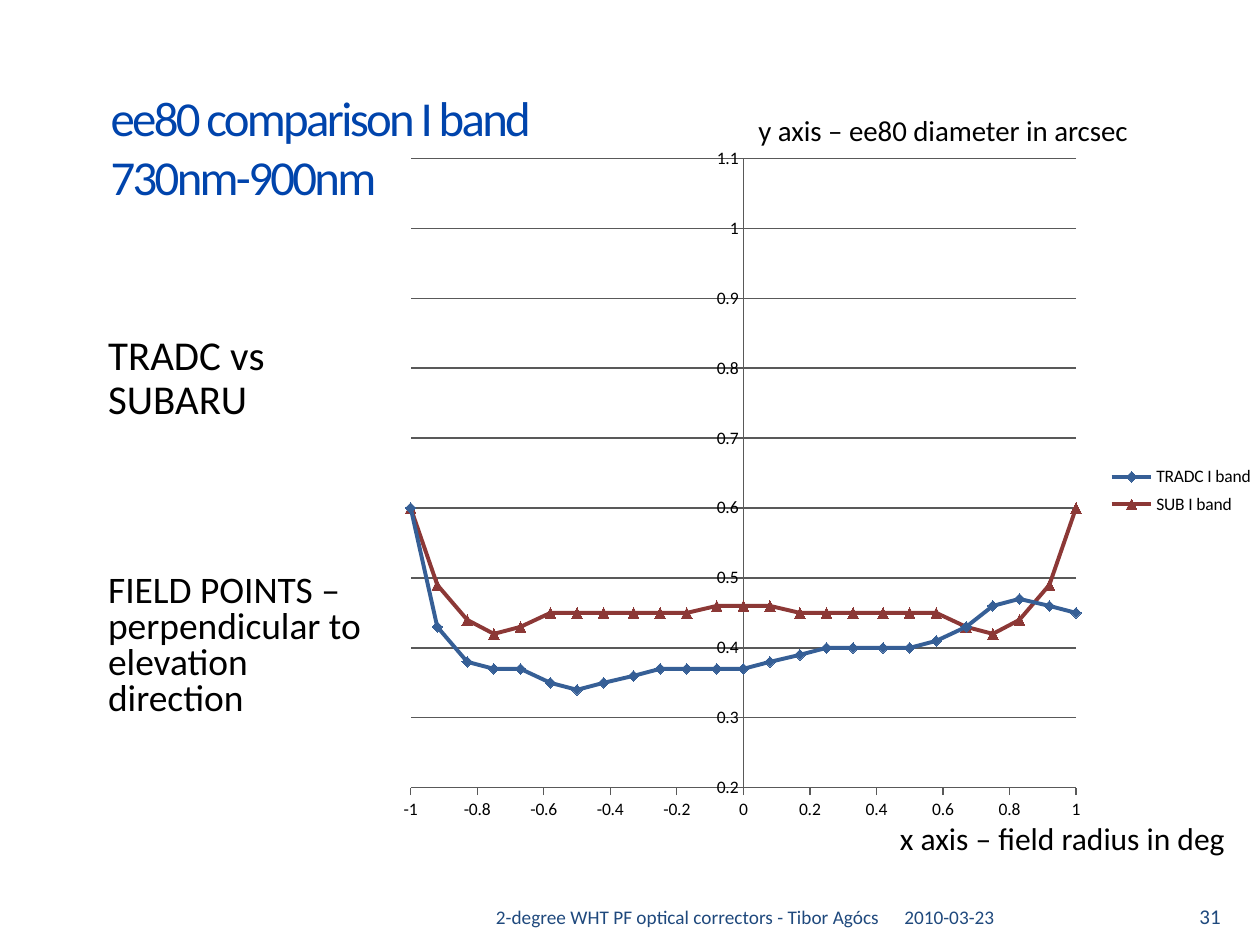
from dataclasses import dataclass

from lxml import etree
from pptx import Presentation
from pptx import util as u
from pptx.chart.data import XyChartData
from pptx.dml.color import RGBColor
from pptx.enum import chart as charts, text
from pptx.oxml.ns import qn

FONT = "Calibri"
COLORS = {
    "title": "0044AC", "footer": "1F497D", "text": "000000",
    "grid": "595959", "tradc": "365F96", "subaru": "8C3836",
}
ANCHOR = text.MSO_ANCHOR
ALIGN = text.PP_ALIGN


@dataclass
class Box:
    left: float
    top: float
    width: float
    height: float

    def lengths(self) -> list:
        return [u.Cm(value) for value in (self.left, self.top, self.width, self.height)]


@dataclass
class Label:
    content: str
    box: Box
    format: dict


@dataclass
class Curve:
    name: str
    color: str
    marker: charts.XL_MARKER_STYLE
    values: list


SUBARU_HALF = [0.6, 0.49, 0.44, 0.42, 0.43, 0.45, 0.45, 0.45, 0.45, 0.45, 0.45, 0.46]
FIELD_RADII = [round(step / 12, 2) for step in range(-12, 13)]
CURVES = [
    Curve("TRADC I band", "tradc", charts.XL_MARKER_STYLE.DIAMOND,
          [0.6, 0.43, 0.38, 0.37, 0.37, 0.35, 0.34, 0.35, 0.36, 0.37, 0.37, 0.37, 0.37,
           0.38, 0.39, 0.4, 0.4, 0.4, 0.4, 0.41, 0.43, 0.46, 0.47, 0.46, 0.45]),
    Curve("SUB I band", "subaru", charts.XL_MARKER_STYLE.TRIANGLE,
          SUBARU_HALF + [0.46] + SUBARU_HALF[::-1]),
]

FOOTER = dict(size=11, color="footer", inset=0.25)
LABELS = [
    Label("2-degree WHT PF optical correctors - Tibor Agócs",
          Box(2.54, 17.83, 15.44, 1.02), FOOTER | dict(align=ALIGN.RIGHT)),
    Label("2010-03-23", Box(17.98, 17.83, 5.92, 1.02), FOOTER),
    Label("31", Box(23.93, 17.83, 1.27, 1.02), FOOTER | dict(size=12)),
    Label("x axis – field radius in deg", Box(18.14, 16.08, 7.26, 1.19), dict(size=18)),
    Label("y axis – ee80 diameter in arcsec", Box(15.29, 1.78, 7.95, 1.19),
          dict(size=16.5, line_spacing=0.9)),
]
BODIES = [
    Label("TRADC vs\nSUBARU", Box(2.18, 6.55, 5.16, 1.98),
          dict(size=23.4, line_spacing=0.9)),
    Label("FIELD POINTS – perpendicular to elevation direction",
          Box(2.18, 11.51, 5.56, 2.97), dict(size=21.4, line_spacing=0.8)),
]


def rgb(name: str) -> RGBColor:
    return RGBColor.from_string(COLORS[name])


def write_text(shape, content: str, *, size: float, color: str = "text",
               align=ALIGN.LEFT, anchor=ANCHOR.BOTTOM, inset: float = 0,
               line_spacing: float = 1.0, tracking: int = 0) -> None:
    frame = shape.text_frame
    frame.text = content
    frame.word_wrap = True
    frame.auto_size = text.MSO_AUTO_SIZE.NONE
    frame.vertical_anchor = anchor
    frame.margin_left = frame.margin_right = u.Cm(inset)
    frame.margin_top = u.Cm(0.13)
    frame.margin_bottom = u.Cm(0.13 if inset else 0)
    for paragraph in frame.paragraphs:
        properties = paragraph._p.get_or_add_pPr()
        properties.set("marL", "0")
        properties.set("indent", "0")
        etree.SubElement(properties, qn("a:buNone"))
        paragraph.alignment = align
        paragraph.line_spacing = line_spacing
        paragraph.space_before = u.Pt(0)
        for run in paragraph.runs:
            run.font.name = FONT
            run.font.size = u.Pt(size)
            run.font.color.rgb = rgb(color)
            if tracking:
                run._r.get_or_add_rPr().set("spc", str(tracking))


def place(shape, box: Box) -> None:
    shape.left, shape.top, shape.width, shape.height = box.lengths()


def make_layout(box: Box, inner: bool = False):
    layout = etree.Element(qn("c:layout"))
    manual = etree.SubElement(layout, qn("c:manualLayout"))
    entries = [("layoutTarget", "inner")] if inner else []
    entries += [("xMode", "edge"), ("yMode", "edge"), ("x", box.left), ("y", box.top),
                ("w", box.width), ("h", box.height)]
    for tag, value in entries:
        etree.SubElement(manual, qn(f"c:{tag}")).set("val", str(value))
    return layout


def format_axis(axis, low: float, high: float, step: float, tick_mark) -> None:
    axis.minimum_scale, axis.maximum_scale, axis.major_unit = low, high, step
    axis.major_tick_mark = tick_mark
    axis.minor_tick_mark = charts.XL_TICK_MARK.NONE
    axis.has_title = False
    axis.tick_labels.number_format = "General"
    axis.tick_labels.number_format_is_linked = False
    axis.format.line.color.rgb = rgb("grid")
    axis.format.line.width = u.Pt(0.75)


def add_comparison_chart(slide, box: Box) -> None:
    data = XyChartData()
    for curve in CURVES:
        points = data.add_series(curve.name)
        for radius, diameter in zip(FIELD_RADII, curve.values):
            points.add_data_point(radius, diameter)
    chart = slide.shapes.add_chart(
        charts.XL_CHART_TYPE.XY_SCATTER_LINES, *box.lengths(), data).chart
    chart.has_title = False
    chart.font.name = FONT
    chart.font.size = u.Pt(10)
    chart.font.color.rgb = rgb("text")
    plot = chart.plots[0]
    plot.vary_by_categories = False

    format_axis(chart.category_axis, -1, 1, 0.2, charts.XL_TICK_MARK.OUTSIDE)
    format_axis(chart.value_axis, 0.2, 1.1, 0.1, charts.XL_TICK_MARK.NONE)
    chart.category_axis.has_major_gridlines = False
    chart.value_axis.has_major_gridlines = True
    gridline = chart.value_axis.major_gridlines.format.line
    gridline.color.rgb = rgb("grid")
    gridline.width = u.Pt(0.75)

    for series, curve in zip(plot.series, CURVES):
        series.smooth = False
        series.format.line.color.rgb = rgb(curve.color)
        series.format.line.width = u.Pt(2.25)
        series.marker.style = curve.marker
        series.marker.size = 6
        series.marker.format.fill.solid()
        series.marker.format.fill.fore_color.rgb = rgb(curve.color)
        series.marker.format.line.color.rgb = rgb(curve.color)

    chart.has_legend = True
    chart.legend.position = charts.XL_LEGEND_POSITION.RIGHT
    chart.legend.include_in_layout = False
    plot_area = chart._chartSpace.chart.plotArea
    for old in plot_area.findall(qn("c:layout")):
        plot_area.remove(old)
    plot_area.insert(0, make_layout(Box(0.03, 0.03, 0.76, 0.9), inner=True))
    legend = chart.legend._element
    for old in legend.findall(qn("c:layout")):
        legend.remove(old)
    legend.find(qn("c:legendPos")).addnext(make_layout(Box(0.82, 0.46, 0.18, 0.09)))


def main() -> None:
    presentation = Presentation()
    presentation.slide_width, presentation.slide_height = u.Cm(25.4), u.Cm(19.05)
    slide = presentation.slides.add_slide(presentation.slide_layouts[3])
    for label in LABELS:
        write_text(slide.shapes.add_textbox(*label.box.lengths()),
                   label.content, **label.format)
    add_comparison_chart(slide, Box(7.75, 2.77, 17.65, 14.1))
    title, *bodies = slide.placeholders
    place(title, Box(1.98, 1.57, 9.53, 2.77))
    write_text(title, "ee80 comparison I band\v730nm-900nm", size=27.9, color="title",
               anchor=ANCHOR.MIDDLE, inset=0.25, tracking=-150)
    for shape, label in zip(bodies, BODIES):
        place(shape, label.box)
        write_text(shape, label.content, **label.format)
    presentation.save("out.pptx")


if __name__ == "__main__":
    main()
